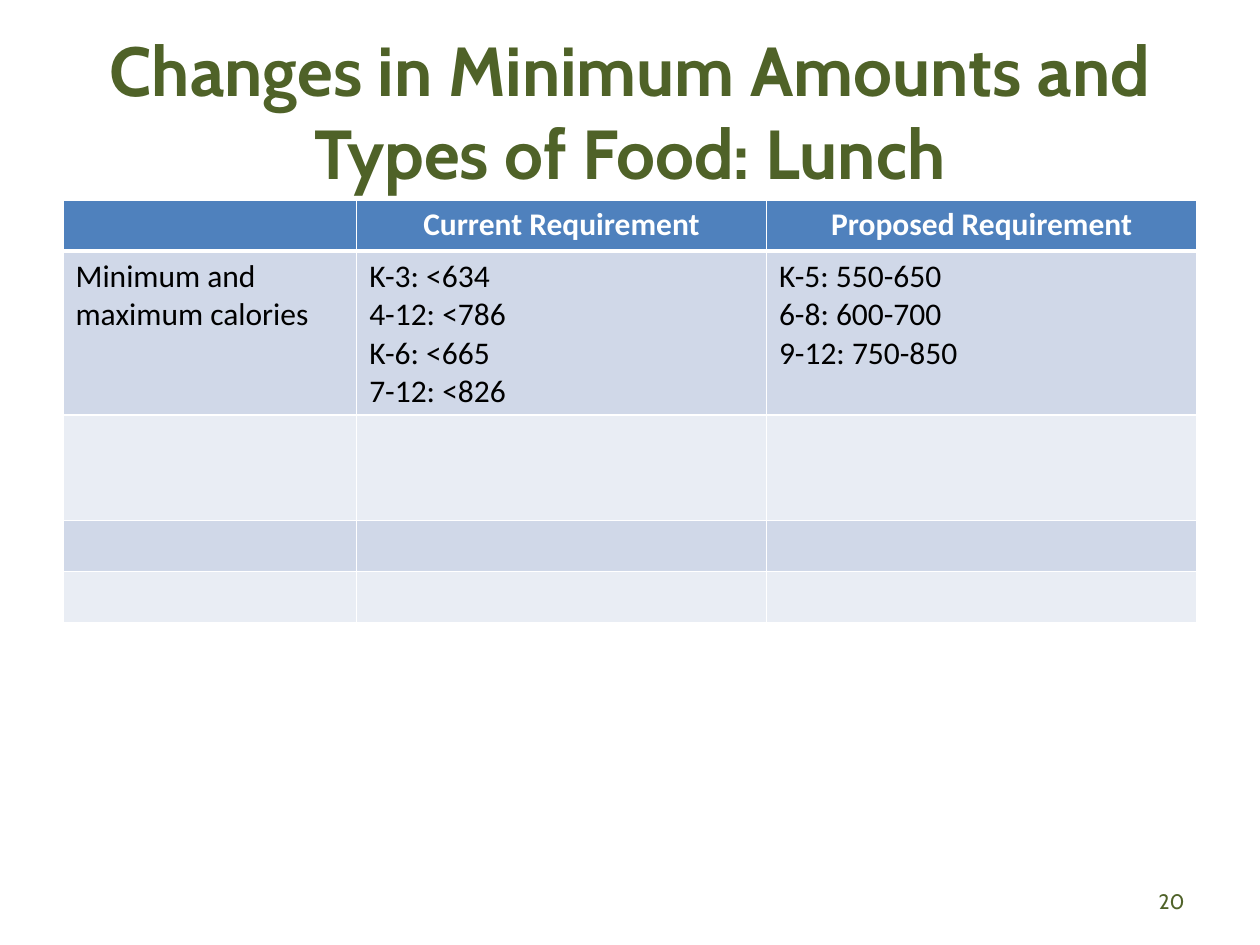
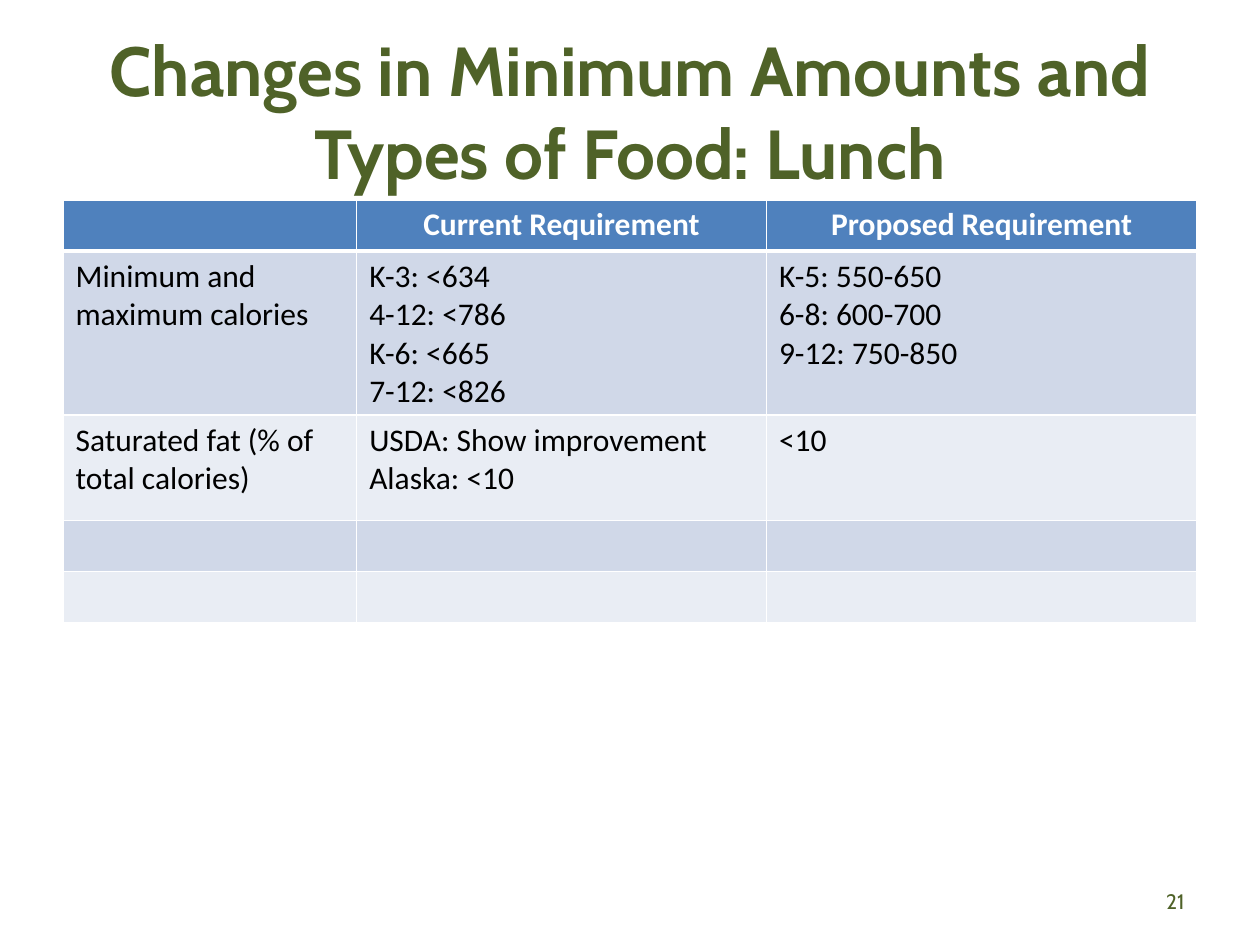
from dataclasses import dataclass

from lxml import etree
from pptx import Presentation
from pptx.dml.color import RGBColor
from pptx.enum.text import MSO_ANCHOR, PP_ALIGN
from pptx.oxml.ns import qn
from pptx.util import Cm, Pt

LEFT, CENTER, RIGHT = PP_ALIGN.LEFT, PP_ALIGN.CENTER, PP_ALIGN.RIGHT
MIDDLE = MSO_ANCHOR.MIDDLE

TITLE = "Changes in Minimum Amounts and Types of Food: Lunch"
HEADINGS = ["", "Current Requirement", "Proposed Requirement"]
CALORIES = [
    "Minimum and maximum calories",
    "K-3: <634\n4-12: <786\nK-6: <665\n7-12: <826",
    "K-5: 550-650\n6-8: 600-700\n9-12: 750-850",
]
SATURATED_FAT = [
    "Saturated fat (% of total calories)",
    "USDA: Show improvement\nAlaska: <10",
    "<10",
]
SLIDES = [
    {"number": "20", "rows": [CALORIES]},
    {"number": "21", "rows": [CALORIES, SATURATED_FAT]},
]


@dataclass(frozen=True)
class Theme:
    green: str = "4F6228"
    header: str = "4F81BD"
    bands: tuple = ("D0D8E8", "E9EDF4")
    white: str = "FFFFFF"
    black: str = "000000"
    display_font: str = "Cabin"
    table_font: str = "Calibri"
    title_size: float = 39.6
    table_size: float = 18
    number_size: float = 12
    thin_border: float = 1
    header_border: float = 3


THEME = Theme()
SLIDE_WIDTH, SLIDE_HEIGHT = 25.4, 19.05
MARGIN = 1.27
CONTENT_WIDTH = SLIDE_WIDTH - 2 * MARGIN
TABLE_TOP = 4.03
COLUMN_WIDTHS = [5.92, 8.26, 8.68]
ROW_HEIGHTS = [1.03, 3.3, 2.13, 1.03, 1.03]
NUMBER_WIDTH = 5.92


def add_span(para, text, font, size, color, bold=False):
    span = para.add_run()
    span.text = text
    span.font.name = font
    span.font.size = Pt(size)
    span.font.bold = bold
    span.font.color.rgb = RGBColor.from_string(color)


def add_label(page, area, text, align, size, bold=False):
    box = page.shapes.add_textbox(*map(Cm, area))
    frame = box.text_frame
    frame.word_wrap = True
    frame.vertical_anchor = MIDDLE
    para = frame.paragraphs[0]
    para.alignment = align
    add_span(para, text, THEME.display_font, size, THEME.green, bold)


def add_borders(cell, top, bottom):
    """Draw white cell edges; must come before the fill in the cell's XML."""
    properties = cell._tc.get_or_add_tcPr()
    widths = {"L": THEME.thin_border, "R": THEME.thin_border, "T": top, "B": bottom}
    for side, width in widths.items():
        line = etree.SubElement(properties, qn(f"a:ln{side}"), w=str(Pt(width)))
        fill = etree.SubElement(line, qn("a:solidFill"))
        etree.SubElement(fill, qn("a:srgbClr"), val=THEME.white)


def fill_cell(cell, text, row):
    is_header = row == 0
    add_borders(
        cell,
        top=THEME.header_border if row == 1 else THEME.thin_border,
        bottom=THEME.header_border if is_header else THEME.thin_border,
    )
    cell.fill.solid()
    color = THEME.header if is_header else THEME.bands[(row - 1) % 2]
    cell.fill.fore_color.rgb = RGBColor.from_string(color)
    if is_header:
        cell.margin_left = cell.margin_right = Cm(0.18)
        cell.margin_top = cell.margin_bottom = 0
    if not text:
        return
    for index, line in enumerate(text.split("\n")):
        frame = cell.text_frame
        para = frame.add_paragraph() if index else frame.paragraphs[0]
        para.alignment = CENTER if is_header else LEFT
        if is_header:
            para.line_spacing = 1.15
        add_span(para, line, THEME.table_font, THEME.table_size,
                 THEME.white if is_header else THEME.black, is_header)


def add_requirements(page, rows):
    """Add the comparison table, leaving rows without content blank."""
    area = (MARGIN, TABLE_TOP, CONTENT_WIDTH, sum(ROW_HEIGHTS))
    table = page.shapes.add_table(
        len(ROW_HEIGHTS), len(COLUMN_WIDTHS), *map(Cm, area)).table
    for column, width in zip(table.columns, COLUMN_WIDTHS):
        column.width = Cm(width)
    for row, height in zip(table.rows, ROW_HEIGHTS):
        row.height = Cm(height)
    filled = [HEADINGS, *rows]
    blank = [[""] * len(COLUMN_WIDTHS)] * (len(ROW_HEIGHTS) - len(filled))
    for row, texts in enumerate(filled + blank):
        for column, text in enumerate(texts):
            fill_cell(table.cell(row, column), text, row)


def main():
    deck = Presentation()
    deck.slide_width, deck.slide_height = Cm(SLIDE_WIDTH), Cm(SLIDE_HEIGHT)
    blank_layout = deck.slide_layouts[6]
    number_left = SLIDE_WIDTH - MARGIN - NUMBER_WIDTH
    for content in SLIDES:
        page = deck.slides.add_slide(blank_layout)
        add_label(page, (MARGIN, 0.64, CONTENT_WIDTH, 3.18), TITLE, CENTER,
                  THEME.title_size, bold=True)
        add_requirements(page, content["rows"])
        add_label(page, (number_left, 17.65, NUMBER_WIDTH, 1.02),
                  content["number"], RIGHT, THEME.number_size)
    deck.save("out.pptx")


if __name__ == "__main__":
    main()
